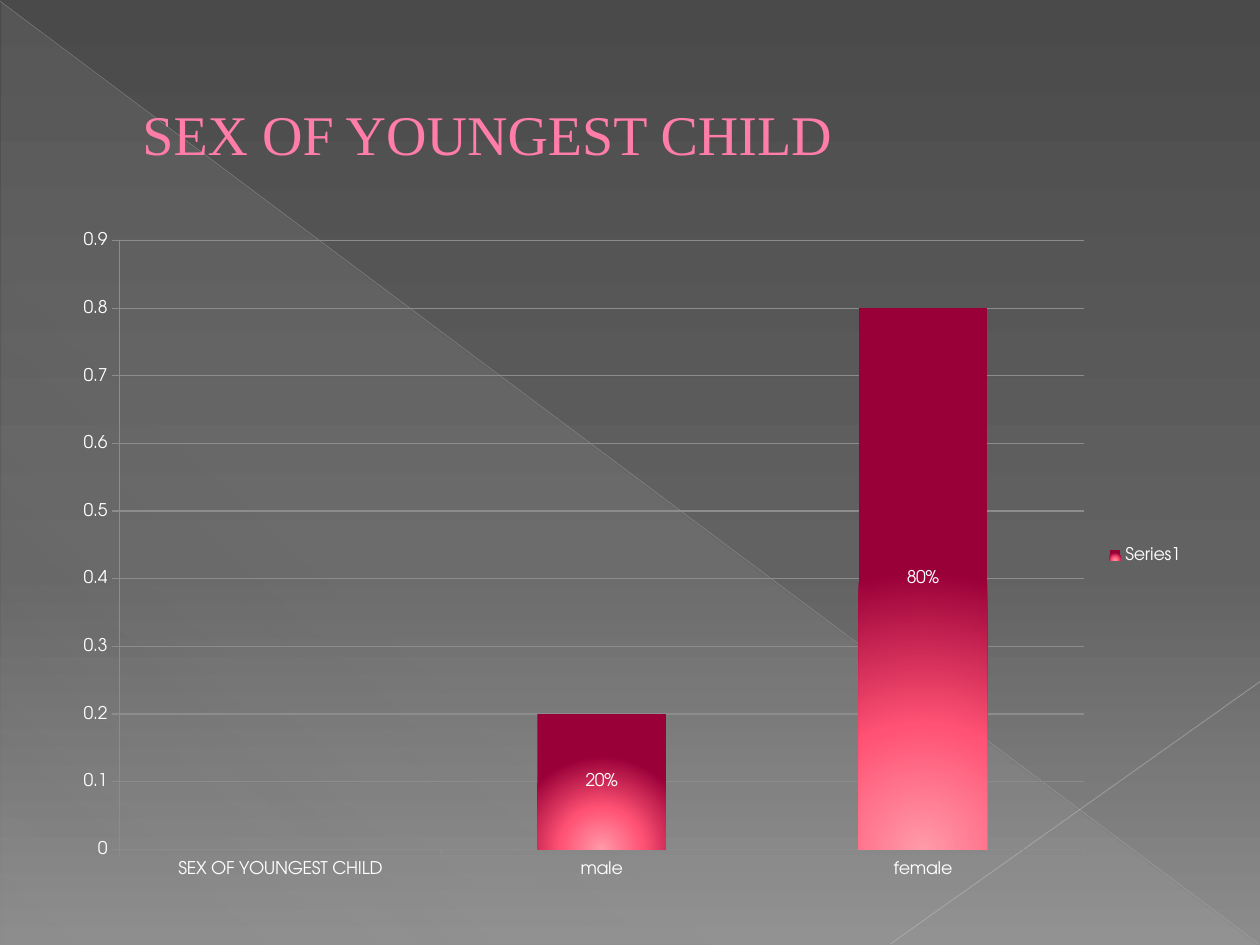
from lxml.etree import SubElement
from pptx import Presentation
from pptx.chart.data import CategoryChartData
from pptx.dml.color import RGBColor
from pptx.enum.chart import XL_CHART_TYPE, XL_LABEL_POSITION, XL_LEGEND_POSITION, XL_TICK_MARK
from pptx.enum.shapes import MSO_CONNECTOR, MSO_SHAPE
from pptx.enum.text import MSO_ANCHOR, PP_ALIGN
from pptx.oxml import parse_xml
from pptx.oxml.ns import nsdecls, qn
from pptx.util import Inches, Pt

TITLE = "SEX OF YOUNGEST CHILD"
CATEGORIES = [TITLE, "male", "female"]
SERIES_NAME = "Series1"
SHARES = [None, 0.2, 0.8]
PLOT_AREA = {"x": 0.05, "y": 0.03, "w": 0.85, "h": 0.91}
DIAGONALS = [
    ((0, 0.01), (9.99, 7.49), "BFBFBF", 0.39, 35),
    ((10, 5.41), (7.07, 7.49), "C6C6C6", 0.47, 45),
]
THEME = {
    "title_font": "Times New Roman",
    "title_size": 32,
    "title": "FF7DA7",
    "title_outline": "B12761",
    "chart_font": "TeX Gyre Adventor",
    "chart_size": 10,
    "chart_text": "FFFFFF",
    "axis": "8C8C8C",
    "background": [(0, "4A4A4A", 100), (60, "626262", 100), (100, "8C8C8C", 100)],
    "triangle": [(0, "D2D2D2", 10), (70, "D2D2D2", 8), (100, "D2D2D2", 1)],
    "bar": [(0, "FF9AA8", 100), (45, "FF5274", 100), (100, "990038", 100)],
}


def color(name):
    return RGBColor.from_string(name)


def set_gradient(fill, parent, stops, angle=None):
    fill.solid()
    stop_xml = "".join(
        f'<a:gs pos="{position * 1000}"><a:srgbClr val="{tone}">'
        f'<a:alpha val="{opacity * 1000}"/></a:srgbClr></a:gs>'
        for position, tone, opacity in stops
    )
    if angle is None:
        direction = '<a:path path="circle"><a:fillToRect l="50000" t="100000" r="50000"/></a:path>'
    else:
        direction = f'<a:lin ang="{angle * 60000}" scaled="0"/>'
    gradient = parse_xml(
        f'<a:gradFill {nsdecls("a")} rotWithShape="1"><a:gsLst>{stop_xml}</a:gsLst>{direction}</a:gradFill>'
    )
    parent.replace(parent.find(qn("a:solidFill")), gradient)


def set_text(shape, text, *, font, size, tone, outline, outline_width, indent):
    frame = shape.text_frame
    frame.word_wrap = True
    frame.vertical_anchor = MSO_ANCHOR.MIDDLE
    paragraph = frame.paragraphs[0]
    paragraph.alignment = PP_ALIGN.LEFT
    properties = paragraph._p.get_or_add_pPr()
    properties.set("marL", str(Inches(indent)))
    properties.set("indent", "0")
    run = paragraph.add_run()
    run.text = text
    run.font.name = font
    run.font.size = Pt(size)
    run.font.color.rgb = color(tone)
    run.font._element.insert(0, parse_xml(
        f'<a:ln {nsdecls("a")} w="{Pt(outline_width)}"><a:solidFill>'
        f'<a:srgbClr val="{outline}"/></a:solidFill></a:ln>'
    ))


def add_diagonal(slide, start, end, tone, width, opacity):
    line = slide.shapes.add_connector(
        MSO_CONNECTOR.STRAIGHT, *(Inches(value) for value in start + end))
    line.line.color.rgb = color(tone)
    line.line.width = Pt(width)
    properties = line.element.spPr
    SubElement(properties.find(".//" + qn("a:srgbClr")), qn("a:alpha"), val=str(opacity * 1000))
    SubElement(properties, qn("a:effectLst"))


def add_backdrop(slide):
    fill = slide.background.fill
    set_gradient(fill, slide.element.find(".//" + qn("p:bgPr")), THEME["background"], 90)
    triangle = slide.shapes.add_shape(
        MSO_SHAPE.RIGHT_TRIANGLE, Inches(0.01), Inches(0.02), Inches(9.98), Inches(7.48))
    triangle.shadow.inherit = False
    triangle.line.fill.background()
    set_gradient(triangle.fill, triangle.element.spPr, THEME["triangle"], 133)
    for diagonal in DIAGONALS:
        add_diagonal(slide, *diagonal)


def add_title(slide):
    title = slide.shapes.title
    title.left, title.top, title.width, title.height = (
        Inches(value) for value in (0.5, 0.29, 9, 1.53))
    set_text(title, TITLE, font=THEME["title_font"], size=THEME["title_size"],
             tone=THEME["title"], outline=THEME["title_outline"], outline_width=0.5, indent=0.53)
    slide.shapes.element.append(title.element)


def add_share_chart(slide):
    data = CategoryChartData()
    data.categories = CATEGORIES
    data.add_series(SERIES_NAME, SHARES)
    chart = slide.shapes.add_chart(
        XL_CHART_TYPE.COLUMN_STACKED, Inches(0.5), Inches(1.75), Inches(9), Inches(5.31), data).chart
    chart.has_title = False
    chart.font.name = THEME["chart_font"]
    chart.font.size = Pt(THEME["chart_size"])
    chart.font.color.rgb = color(THEME["chart_text"])
    chart.has_legend = True
    chart.legend.position = XL_LEGEND_POSITION.RIGHT
    chart.legend.include_in_layout = False

    for axis in (chart.category_axis, chart.value_axis):
        axis.major_tick_mark = XL_TICK_MARK.OUTSIDE
        axis.minor_tick_mark = XL_TICK_MARK.NONE
        axis.format.line.color.rgb = color(THEME["axis"])
    values = chart.value_axis
    values.minimum_scale, values.maximum_scale, values.major_unit = 0, 0.9, 0.1
    values.tick_labels.number_format = "General"
    values.tick_labels.number_format_is_linked = False
    values.has_major_gridlines = True
    values.major_gridlines.format.line.color.rgb = color(THEME["axis"])

    plot = chart.plots[0]
    plot.gap_width, plot.overlap = 150, 100
    plot.vary_by_categories = False
    series = plot.series[0]
    series.invert_if_negative = False
    fill = series.format.fill
    set_gradient(fill, series._element.find(qn("c:spPr")), THEME["bar"])
    labels = series.data_labels
    labels.show_value = True
    labels.number_format = "0%"
    labels.number_format_is_linked = False
    labels.position = XL_LABEL_POSITION.CENTER

    plot_area = chart._chartSpace.find(".//" + qn("c:plotArea"))
    old_layout = plot_area.find(qn("c:layout"))
    if old_layout is not None:
        plot_area.remove(old_layout)
    sizes = "".join(f'<c:{key} val="{value}"/>' for key, value in PLOT_AREA.items())
    plot_area.insert(0, parse_xml(
        f'<c:layout {nsdecls("c")}><c:manualLayout><c:layoutTarget val="inner"/>'
        f'<c:xMode val="edge"/><c:yMode val="edge"/>{sizes}</c:manualLayout></c:layout>'
    ))


def main():
    presentation = Presentation()
    presentation.slide_width, presentation.slide_height = Inches(10), Inches(7.5)
    slide = presentation.slides.add_slide(presentation.slide_layouts[5])
    add_backdrop(slide)
    add_title(slide)
    add_share_chart(slide)
    presentation.save("out.pptx")


if __name__ == "__main__":
    main()
